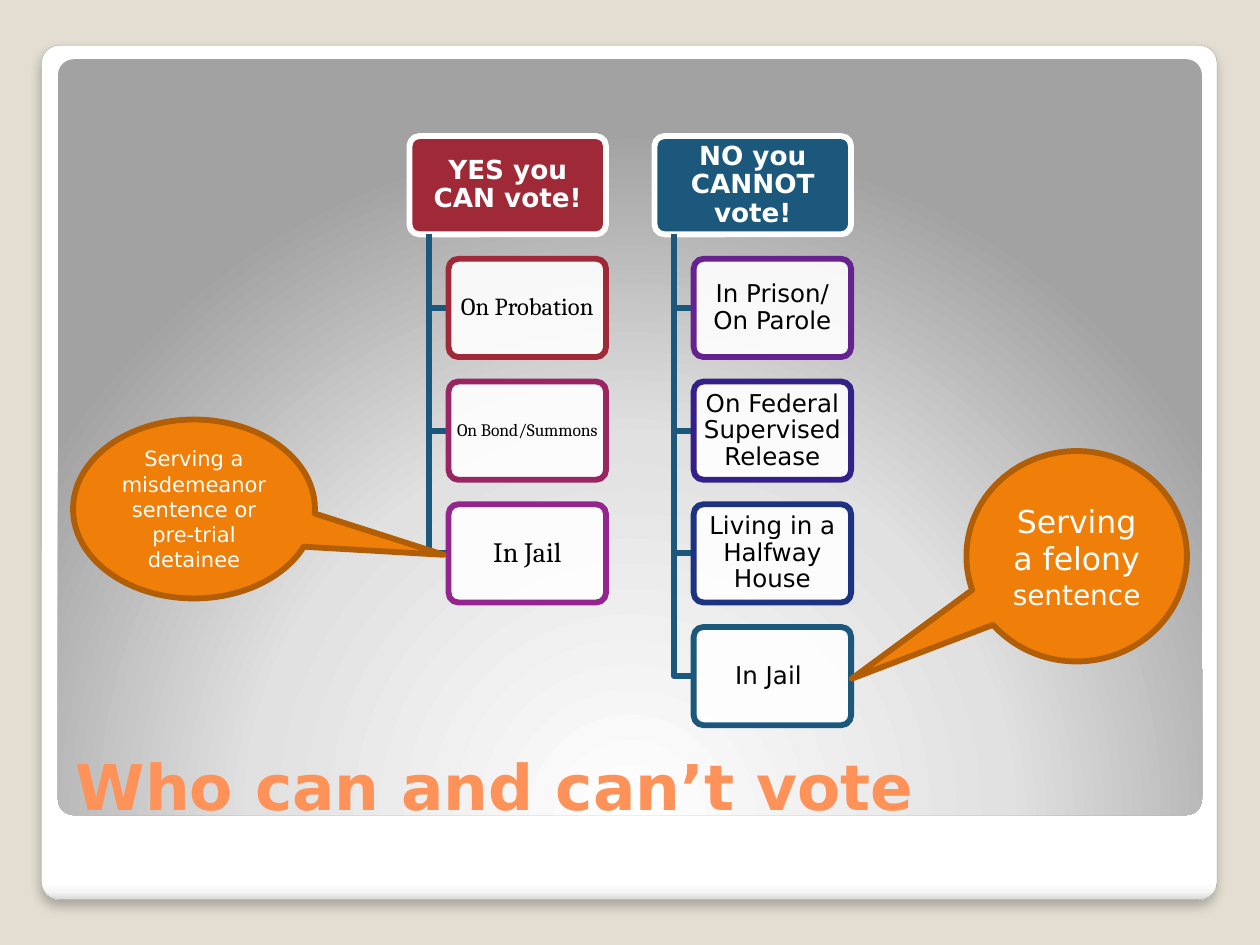
from lxml import etree
from pptx import Presentation
from pptx.dml.color import RGBColor
from pptx.enum import shapes, text
from pptx.oxml import ns
from pptx.util import Inches, Pt

BACKGROUND = RGBColor(0xE3, 0xDE, 0xD1)
WHITE = RGBColor(0xFF, 0xFF, 0xFF)
BLACK = RGBColor(0, 0, 0)
GREY = RGBColor(0xA4, 0xA4, 0xA4)
CORAL = RGBColor(0xFF, 0x92, 0x58)
ORANGE = RGBColor(0xF0, 0x7F, 0x09)
BROWN = RGBColor(0xB2, 0x5E, 0x07)
RED = RGBColor(0x9F, 0x29, 0x36)
BLUE = RGBColor(0x1B, 0x58, 0x7C)
RASPBERRY = RGBColor(0x99, 0x26, 0x63)
MAGENTA = RGBColor(0x94, 0x24, 0x8E)
PURPLE = RGBColor(0x66, 0x22, 0x8E)
INDIGO = RGBColor(0x35, 0x1F, 0x88)
NAVY = RGBColor(0x1D, 0x32, 0x82)

SANS, SERIF = "DejaVu Sans", "Cambria"
LINE = 3.35

TITLE = "Who can and can’t vote"
# heading, heading colour, font of the items, items as (words, size, outline)
COLUMNS = [
    ("YES you CAN vote!", RED, SERIF, [
        ("On Probation", 14, RED),
        ("On Bond/Summons", 10, RASPBERRY),
        ("In Jail", 16, MAGENTA)]),
    ("NO you CANNOT vote!", BLUE, SANS, [
        ("In Prison/ On Parole", 14, PURPLE),
        ("On Federal Supervised Release", 14, INDIGO),
        ("Living in a Halfway House", 14, NAVY),
        ("In Jail ", 14, BLUE)]),
]
# place, pointer tip, runs as (words, size)
CALLOUTS = [
    ((7.67, 3.58, 1.75, 1.67), (-1.02, 0.582),
     [("Serving a felony ", 18), ("sentence", 16)]),
    ((0.58, 3.33, 1.92, 1.42), (1.032, 0.256),
     [("Serving a misdemeanor sentence or pre-trial detainee", 12)]),
]
# place, gradient stops, gradient direction
PANELS = [
    ((0.33, 0.36, 9.33, 6.78),
     [(0, "FFFFFF"), (98, "FFFFFF"), (99, "F7F7F7"), (100, "DADADA")],
     '<a:lin ang="5400000" scaled="0"/>'),
    ((0.46, 0.47, 9.08, 6),
     [(0, "FFFFFF"), (55, "E1E1E1"), (100, "A2A2A2")],
     '<a:path path="circle"><a:fillToRect l="50000" t="175000" r="50000" b="-75000"/></a:path>'),
]
PANEL_SHADOW = (
    '<a:outerShdw blurRad="76200" dist="50800" dir="5400000" algn="t" rotWithShape="0">'
    '<a:srgbClr val="000000"><a:alpha val="25000"/></a:srgbClr></a:outerShdw>')

COLUMN_LEFT, COLUMN_STEP = 3.25, 1.945
TOP, ROW_STEP = 1.08, 0.974
HEAD_WIDTH, ITEM_WIDTH, BOX_HEIGHT = 1.56, 1.25, 0.78
STEM_INDENT, ITEM_INDENT = 0.155, 0.31


def drawing(tag, inner):
    return etree.fromstring(
        f'<a:{tag} xmlns:a="{ns.nsuri("a")}">{inner}</a:{tag}>')


def add_shape(page, kind, place, adjustments, fill, line, width):
    shape = page.shapes.add_shape(kind, *map(Inches, place))
    shape.shadow.inherit = False
    for index, value in enumerate(adjustments):
        shape.adjustments[index] = value
    shape.fill.solid()
    shape.fill.fore_color.rgb = fill
    if line is None:
        shape.line.fill.background()
    else:
        shape.line.color.rgb = line
        shape.line.width = Pt(width)
    return shape


def write(shape, runs, font, color, bold=False):
    """Put centred runs of (words, size) into the shape."""
    frame = shape.text_frame
    frame.word_wrap = True
    frame.vertical_anchor = text.MSO_ANCHOR.MIDDLE
    para = frame.paragraphs[0]
    para.alignment = text.PP_ALIGN.CENTER
    for words, size in runs:
        span = para.add_run()
        span.text = words
        span.font.name, span.font.size = font, Pt(size)
        span.font.bold, span.font.color.rgb = bold, color
    return frame


def add_box(page, place, fill, line, run, font, color, bold=False):
    box = add_shape(page, shapes.MSO_SHAPE.ROUNDED_RECTANGLE, place, [0.1],
                    fill, line, LINE)
    frame = write(box, [run], font, color, bold)
    frame.margin_left = frame.margin_right = Inches(0.01)
    frame.margin_top = frame.margin_bottom = 0
    frame.paragraphs[0].line_spacing = 0.9
    return box


def add_elbow(page, left, top, right, bottom):
    left, top, right, bottom = map(Inches, (left, top, right, bottom))
    builder = page.shapes.build_freeform(left, top)
    builder.add_line_segments([(left, bottom), (right, bottom)], close=False)
    elbow = builder.convert_to_shape()
    elbow.shadow.inherit = False
    elbow.fill.background()
    elbow.line.color.rgb = BLUE
    elbow.line.width = Pt(LINE)


def add_panels(page):
    for index, (place, stops, direction) in enumerate(PANELS):
        panel = add_shape(page, shapes.MSO_SHAPE.ROUNDED_RECTANGLE, place,
                          [0.021], WHITE, None if index else GREY, 0.16)
        marks = "".join(
            f'<a:gs pos="{pos * 1000}"><a:srgbClr val="{color}"/></a:gs>'
            for pos, color in stops)
        properties = panel.fill._xPr
        properties.replace(
            properties.find(ns.qn("a:solidFill")),
            drawing("gradFill", f"<a:gsLst>{marks}</a:gsLst>{direction}"))
        if index == 0:
            properties.replace(properties.find(ns.qn("a:effectLst")),
                               drawing("effectLst", PANEL_SHADOW))


def add_title(page):
    title = page.shapes.title
    page.shapes._spTree.append(title._element)  # in front of the panels
    title.left, title.top, title.width, title.height = map(
        Inches, (0.5, 5.58, 9.12, 1))
    title.text_frame.text = TITLE
    title.text_frame.vertical_anchor = text.MSO_ANCHOR.BOTTOM
    para = title.text_frame.paragraphs[0]
    para.alignment = text.PP_ALIGN.LEFT
    font = para.runs[0].font
    font.name, font.size, font.bold = SANS, Pt(36), True
    font.color.rgb = CORAL


def add_column(page, left, heading, color, font, items):
    add_box(page, (left, TOP, HEAD_WIDTH, BOX_HEIGHT), color, WHITE,
            (heading, 15), SANS, WHITE, bold=True)
    item_left = left + ITEM_INDENT
    for row, (words, size, outline) in enumerate(items, 1):
        top = TOP + row * ROW_STEP
        add_elbow(page, left + STEM_INDENT, TOP + BOX_HEIGHT,
                  item_left, top + BOX_HEIGHT / 2)
        box = add_box(page, (item_left, top, ITEM_WIDTH, BOX_HEIGHT), WHITE,
                      outline, (words, size), font, BLACK)
        white = box.fill._xPr.find(ns.qn("a:solidFill"))[0]
        etree.SubElement(white, ns.qn("a:alpha"), val="90000")


def main():
    deck = Presentation()
    deck.slide_width, deck.slide_height = Inches(10), Inches(7.5)
    page = deck.slides.add_slide(deck.slide_layouts[5])
    page.background.fill.solid()
    page.background.fill.fore_color.rgb = BACKGROUND
    add_panels(page)
    add_title(page)
    for index, column in enumerate(COLUMNS):
        add_column(page, COLUMN_LEFT + index * COLUMN_STEP, *column)
    for place, tip, runs in CALLOUTS:
        callout = add_shape(page, shapes.MSO_SHAPE.OVAL_CALLOUT, place, tip,
                            ORANGE, BROWN, LINE)
        write(callout, runs, SANS, WHITE)
    deck.save("out.pptx")


if __name__ == "__main__":
    main()
